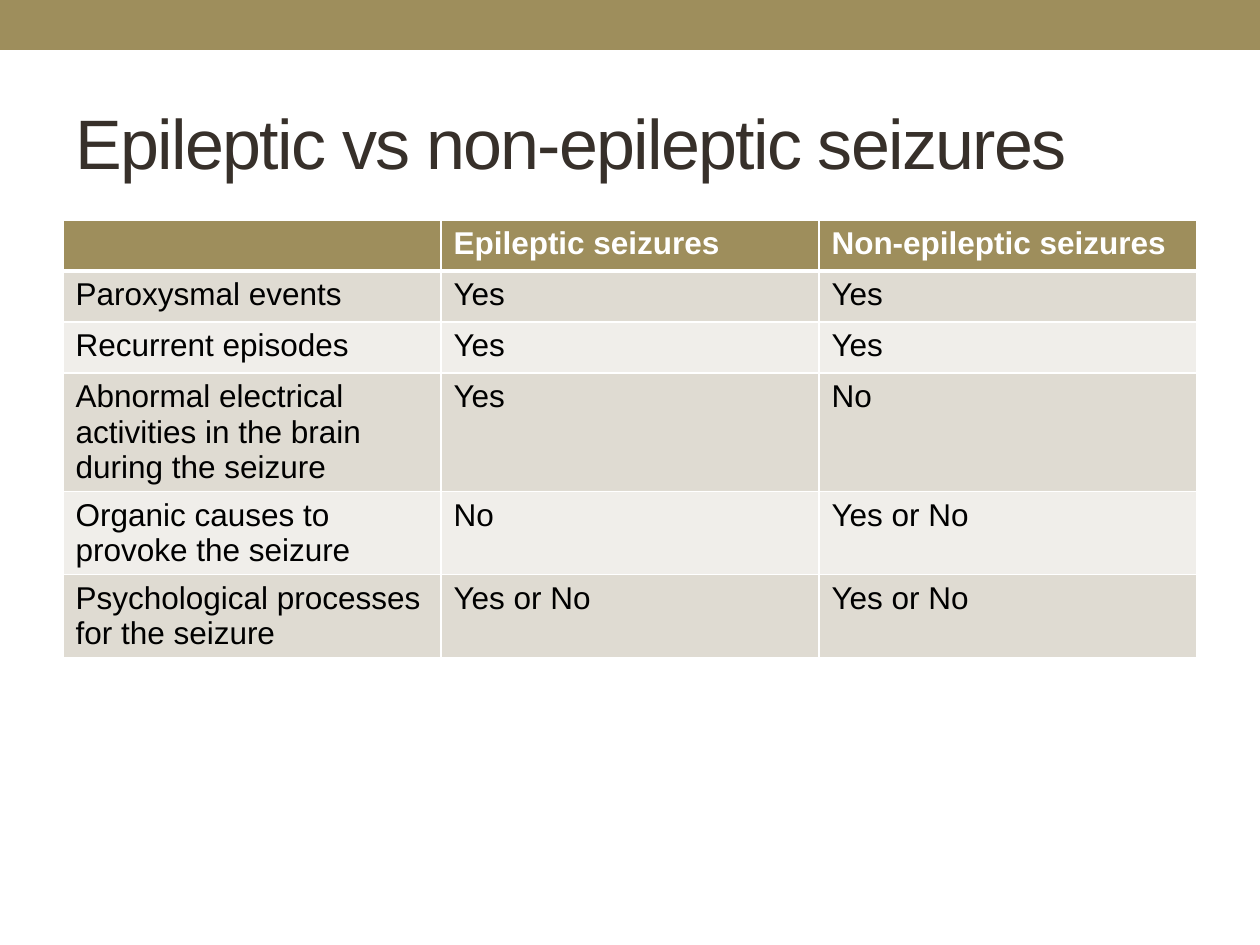
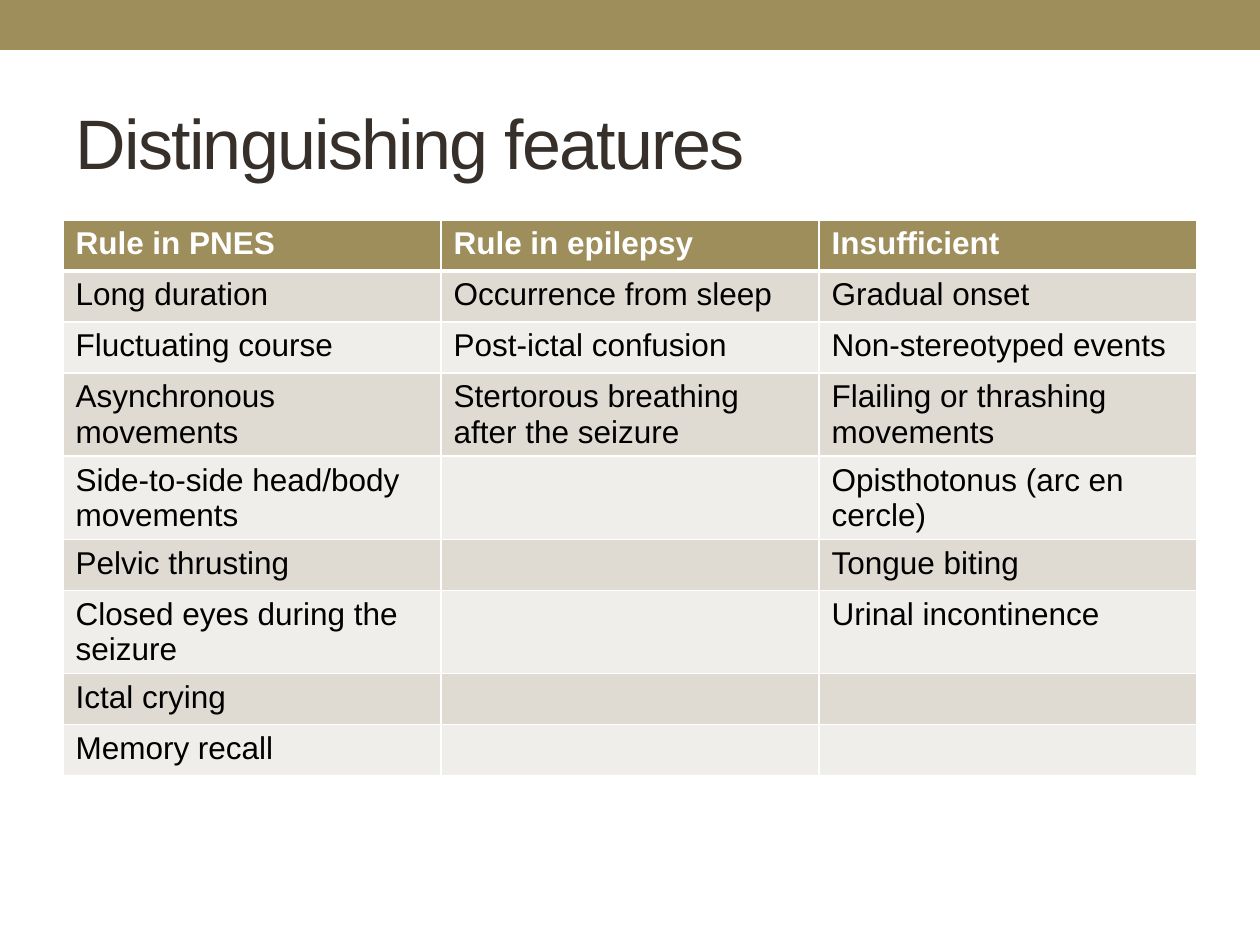
from lxml import etree
from pptx import Presentation
from pptx import util as u
from pptx.dml.color import RGBColor
from pptx.enum import shapes, text
from pptx.oxml import ns

PX = u.Inches(1) / 126
FONT = "Arial"
COLORS = {
    "gold": "9E8E5C",
    "title": "37302A",
    "dark_band": "DFDBD2",
    "light_band": "F0EEEA",
    "white": "FFFFFF",
    "black": "000000",
}

SLIDE_WIDTH, SLIDE_HEIGHT = 1260, 945
TOP_BAND_HEIGHT = 50
MARGIN = 63
CONTENT_WIDTH = SLIDE_WIDTH - 2 * MARGIN
TITLE_TOP, TITLE_HEIGHT = 73, 136
TABLE_TOP, ROW_HEIGHT = 220, 51

SLIDES = [
    ("Epileptic vs non-epileptic seizures", [
        ("", "Epileptic seizures", "Non-epileptic seizures"),
        ("Paroxysmal events", "Yes", "Yes"),
        ("Recurrent episodes", "Yes", "Yes"),
        ("Abnormal electrical activities in the brain during the seizure", "Yes", "No"),
        ("Organic causes to provoke the seizure", "No", "Yes or No"),
        ("Psychological processes for the seizure", "Yes or No", "Yes or No"),
    ]),
    ("Distinguishing features", [
        ("Rule in PNES", "Rule in epilepsy", "Insufficient"),
        ("Long duration", "Occurrence from sleep", "Gradual onset"),
        ("Fluctuating course", "Post-ictal confusion", "Non-stereotyped events"),
        ("Asynchronous movements", "Stertorous breathing after the seizure",
         "Flailing or thrashing movements"),
        ("Side-to-side head/body movements", "", "Opisthotonus (arc en cercle)"),
        ("Pelvic thrusting", "", "Tongue biting"),
        ("Closed eyes during the seizure", "", "Urinal incontinence"),
        ("Ictal crying", "", ""),
        ("Memory recall", "", ""),
    ]),
]


def px(length):
    return u.Emu(round(length * PX))


def color(name):
    return RGBColor.from_string(COLORS[name])


def fill_solid(part, name):
    part.fill.solid()
    part.fill.fore_color.rgb = color(name)


def set_font(paragraph, size, name, bold=False):
    font = paragraph.font
    font.name, font.size, font.bold = FONT, u.Pt(size), bold
    font.color.rgb = color(name)


def add_top_band(slide):
    band = slide.shapes.add_shape(
        shapes.MSO_SHAPE.RECTANGLE, 0, 0, px(SLIDE_WIDTH), px(TOP_BAND_HEIGHT))
    band.shadow.inherit = False
    fill_solid(band, "gold")
    band.line.fill.background()


def set_title(slide, wording):
    title = slide.shapes.title
    title.left, title.top = px(MARGIN), px(TITLE_TOP)
    title.width, title.height = px(CONTENT_WIDTH), px(TITLE_HEIGHT)
    frame = title.text_frame
    frame.text = wording
    frame.auto_size = text.MSO_AUTO_SIZE.NONE
    frame.vertical_anchor = text.MSO_ANCHOR.MIDDLE
    paragraph = frame.paragraphs[0]
    paragraph.alignment = text.PP_ALIGN.LEFT
    set_font(paragraph, 40, "title")
    paragraph.runs[0]._r.get_or_add_rPr().set("spc", "-100")


def set_borders(cell, top, bottom):
    """Draw white cell borders; top and bottom are widths in points."""
    properties = cell._tc.get_or_add_tcPr()
    for side, width in (("L", 1), ("R", 1), ("T", top), ("B", bottom)):
        line = etree.SubElement(properties, ns.qn(f"a:ln{side}"), w=str(u.Pt(width)))
        solid = etree.SubElement(line, ns.qn("a:solidFill"))
        etree.SubElement(solid, ns.qn("a:srgbClr"), val=COLORS["white"])


def add_feature_table(slide, rows):
    table = slide.shapes.add_table(
        len(rows), len(rows[0]), px(MARGIN), px(TABLE_TOP),
        px(CONTENT_WIDTH), px(ROW_HEIGHT * len(rows))).table
    for row_index, row in enumerate(rows):
        is_header = row_index == 0
        band = "gold" if is_header else ("light_band", "dark_band")[row_index % 2]
        for column_index, wording in enumerate(row):
            cell = table.cell(row_index, column_index)
            cell.text = wording
            set_font(cell.text_frame.paragraphs[0], 18,
                     "white" if is_header else "black", is_header)
            set_borders(cell, top=3 if row_index == 1 else 1,
                        bottom=3 if is_header else 1)
            fill_solid(cell, band)


def main():
    presentation = Presentation()
    presentation.slide_width = px(SLIDE_WIDTH)
    presentation.slide_height = px(SLIDE_HEIGHT)
    title_only = presentation.slide_layouts[5]
    for title, rows in SLIDES:
        slide = presentation.slides.add_slide(title_only)
        add_top_band(slide)
        set_title(slide, title)
        add_feature_table(slide, rows)
    presentation.save("out.pptx")


if __name__ == "__main__":
    main()
